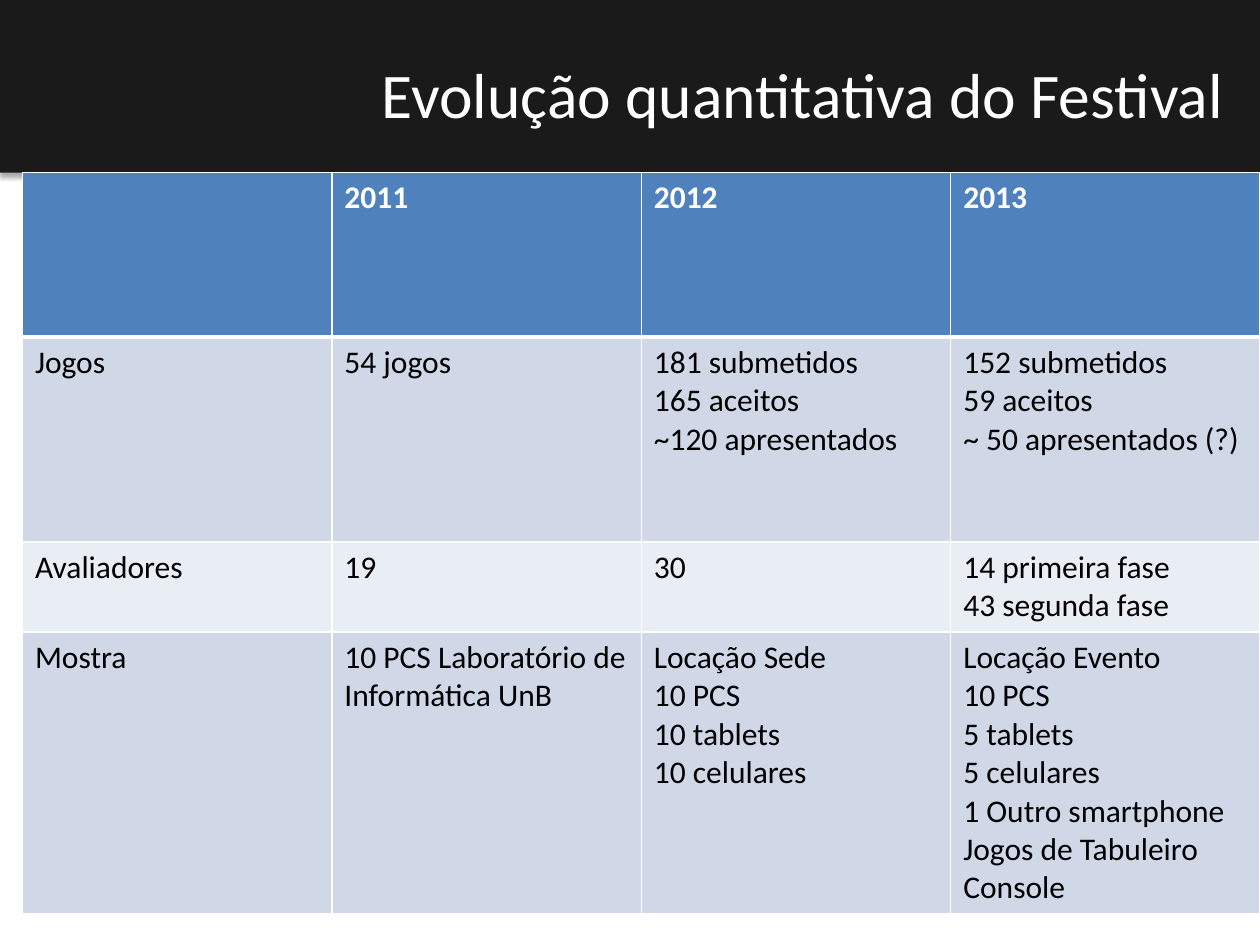
from lxml import etree
from pptx import Presentation
from pptx.dml.color import RGBColor
from pptx.enum.shapes import MSO_SHAPE
from pptx.enum.text import MSO_ANCHOR, MSO_AUTO_SIZE, PP_ALIGN
from pptx.oxml import parse_xml
from pptx.util import Pt

RECTANGLE = MSO_SHAPE.RECTANGLE
MIDDLE = MSO_ANCHOR.MIDDLE
NO_AUTOFIT = MSO_AUTO_SIZE.NONE
RIGHT = PP_ALIGN.RIGHT
TITLE_ONLY = 5
DRAWING_NS = "http://schemas.openxmlformats.org/drawingml/2006/main"

WIDTH, HEIGHT = 720, 540
BAND_HEIGHT = 98.64
TABLE_LEFT = 12.8
COLUMN_WIDTH = 176.85
ROW_HEIGHTS = [94, 117, 51.5, 161]
ROW_FILLS = ["4F81BD", "D0D8E8", "E9EDF4", "D0D8E8"]

FESTIVAL_ROWS = [
    ["", "2011", "2012", "2013"],
    ["Jogos", "54 jogos",
     "181 submetidos\n165 aceitos\n~120 apresentados",
     "152 submetidos\n59 aceitos\n~ 50 apresentados (?)"],
    ["Avaliadores", "19", "30", "14 primeira fase\n43 segunda fase"],
    ["Mostra", "10 PCS Laboratório de Informática UnB",
     "Locação Sede\n10 PCS\n10 tablets\n10 celulares",
     "Locação Evento\n10 PCS\n5 tablets\n5 celulares\n1 Outro smartphone\n"
     "Jogos de Tabuleiro\nConsole"],
]


def color(value):
    return RGBColor.from_string(value)


def apply_format(target, values):
    for name, value in values.items():
        setattr(target, name, value)


def format_font(font, size, ink, bold=False):
    apply_format(font, {"name": "Calibri", "size": Pt(size), "bold": bold})
    font.color.rgb = color(ink)


def add_band(slide):
    band = slide.shapes.add_shape(RECTANGLE, 0, 0, Pt(WIDTH), Pt(BAND_HEIGHT))
    band.fill.solid()
    band.fill.fore_color.rgb = color("1A1A1A")
    band.line.fill.background()
    band._element.spPr.append(parse_xml(
        f'<a:effectLst xmlns:a="{DRAWING_NS}">'
        f'<a:outerShdw blurRad="{Pt(3.1)}" dist="{Pt(1.8)}" dir="5400000" rotWithShape="0">'
        '<a:srgbClr val="000000"><a:alpha val="35000"/></a:srgbClr>'
        '</a:outerShdw></a:effectLst>'))
    slide.shapes._spTree.insert(2, band._element)


def set_title(slide, text):
    title = slide.shapes.title
    apply_format(title, {"left": Pt(159), "top": Pt(26),
                         "width": Pt(547.5), "height": Pt(54)})
    title.text = text
    apply_format(title.text_frame, {"auto_size": NO_AUTOFIT, "word_wrap": True,
                                    "vertical_anchor": MIDDLE})
    heading = title.text_frame.paragraphs[0]
    heading.alignment = RIGHT
    format_font(heading.font, 36.3, "FFFFFF")


def set_borders(cell, widths):
    properties = cell._tc.get_or_add_tcPr()
    for position, (side, width) in enumerate(widths.items()):
        border = etree.Element(f"{{{DRAWING_NS}}}{side}", w=str(Pt(width)))
        fill = etree.SubElement(border, f"{{{DRAWING_NS}}}solidFill")
        etree.SubElement(fill, f"{{{DRAWING_NS}}}srgbClr", val="FFFFFF")
        properties.insert(position, border)


def format_cell(cell, text, row_index):
    is_header = row_index == 0
    cell.text = text
    cell.fill.solid()
    cell.fill.fore_color.rgb = color(ROW_FILLS[row_index])
    for line in cell.text_frame.paragraphs:
        format_font(line.font, 18, "FFFFFF" if is_header else "000000", is_header)
    set_borders(cell, {"lnL": 1, "lnR": 1,
                       "lnT": 3 if row_index == 1 else 1,
                       "lnB": 3 if is_header else 1})


def add_festival_table(slide):
    column_count = len(FESTIVAL_ROWS[0])
    table = slide.shapes.add_table(
        len(FESTIVAL_ROWS), column_count, Pt(TABLE_LEFT), Pt(BAND_HEIGHT),
        Pt(COLUMN_WIDTH * column_count), Pt(sum(ROW_HEIGHTS))).table
    for column in table.columns:
        column.width = Pt(COLUMN_WIDTH)
    for row_index, texts in enumerate(FESTIVAL_ROWS):
        table.rows[row_index].height = Pt(ROW_HEIGHTS[row_index])
        for column_index, text in enumerate(texts):
            format_cell(table.cell(row_index, column_index), text, row_index)


def main():
    presentation = Presentation()
    apply_format(presentation, {"slide_width": Pt(WIDTH), "slide_height": Pt(HEIGHT)})
    slide = presentation.slides.add_slide(presentation.slide_layouts[TITLE_ONLY])
    add_band(slide)
    set_title(slide, "Evolução quantitativa do Festival")
    add_festival_table(slide)
    presentation.save("out.pptx")


if __name__ == "__main__":
    main()
